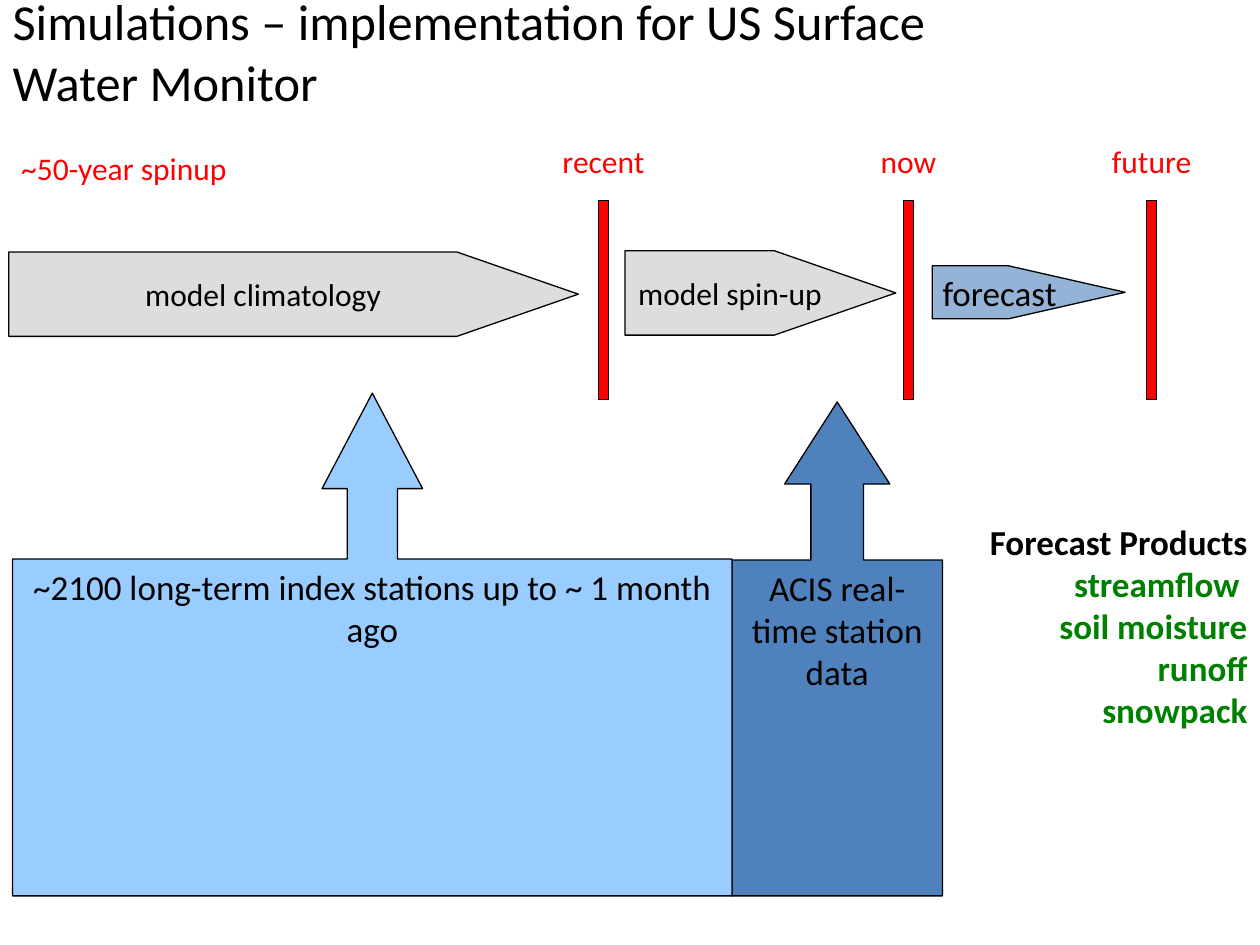
from dataclasses import dataclass

from pptx import Presentation
from pptx.dml.color import RGBColor
from pptx.enum.shapes import MSO_SHAPE as Shape
from pptx.enum.text import MSO_ANCHOR as Anchor, MSO_AUTO_SIZE as AutoSize, PP_ALIGN as Align
from pptx.util import Inches, Pt


@dataclass(frozen=True)
class Theme:
    font: str = "Calibri"
    ink: str = "000000"
    time: str = "FF0000"
    product: str = "008000"
    model: str = "DDDDDD"
    forecast: str = "95B3D7"
    index_stations: str = "99CCFF"
    realtime_stations: str = "4F81BD"
    title_size: float = 28.8
    body_size: float = 20
    label_size: float = 18
    outline: float = 0.75


THEME = Theme()


def style(paragraph, size, color=THEME.ink, align=Align.CENTER, bold=False):
    paragraph.alignment = align
    font = paragraph.font
    font.name, font.size, font.bold = THEME.font, Pt(size), bold
    font.color.rgb = RGBColor.from_string(color)


def add_block(slide, kind, box, fill, adjustments=()):
    shape = slide.shapes.add_shape(kind, *map(Inches, box))
    shape.shadow.inherit = False
    shape.fill.solid()
    shape.fill.fore_color.rgb = RGBColor.from_string(fill)
    shape.line.color.rgb = RGBColor.from_string(THEME.ink)
    shape.line.width = Pt(THEME.outline)
    for index, value in enumerate(adjustments):
        shape.adjustments[index] = value
    return shape


def set_title(slide, box, text):
    title = slide.shapes.title
    title.left, title.top, title.width, title.height = map(Inches, box)
    frame = title.text_frame
    frame.text = text
    frame.auto_size = AutoSize.NONE
    frame.vertical_anchor = Anchor.MIDDLE
    style(frame.paragraphs[0], THEME.title_size, align=Align.LEFT)


def add_label(slide, box, text, align=Align.CENTER):
    frame = slide.shapes.add_textbox(*map(Inches, box)).text_frame
    frame.word_wrap = False
    frame.text = text
    style(frame.paragraphs[0], THEME.label_size, THEME.time, align)


def add_time_mark(slide, box, text):
    """A red bar at the foot of the box with its label centred above."""
    left, top, width, height = box
    bar_width, bar_height = 0.08, 1.58
    add_label(slide, (left, top, width, 0.4), text)
    add_block(slide, Shape.RECTANGLE,
              (left + (width - bar_width) / 2, top + height - bar_height, bar_width, bar_height),
              THEME.time)


def add_phase(slide, box, text, fill, size, point):
    shape = add_block(slide, Shape.PENTAGON, box, fill, [point])
    frame = shape.text_frame
    frame.word_wrap = False
    frame.vertical_anchor = Anchor.MIDDLE
    frame.text = text
    style(frame.paragraphs[0], size)


def add_data_source(slide, box, text, fill, adjustments):
    shape = add_block(slide, Shape.UP_ARROW_CALLOUT, box, fill, adjustments)
    frame = shape.text_frame
    frame.word_wrap = True
    frame.vertical_anchor = Anchor.TOP
    frame.text = text
    style(frame.paragraphs[0], THEME.body_size)


def add_products(slide, box, heading, products):
    frame = slide.shapes.add_textbox(*map(Inches, box)).text_frame
    frame.word_wrap = True
    frame.text = "\n".join([heading, *products])
    for index, paragraph in enumerate(frame.paragraphs):
        color = THEME.product if index else THEME.ink
        style(paragraph, THEME.body_size, color, Align.RIGHT, bold=True)


def build_slide(presentation):
    slide = presentation.slides.add_slide(presentation.slide_layouts[5])
    set_title(slide, (0, 0.07, 8.5, 0.67),
              "Simulations – implementation for US Surface Water Monitor")
    add_products(slide, (7.33, 4.08, 2.67, 1.77), "Forecast Products",
                 ["streamflow ", "soil moisture", "runoff", "snowpack"])

    add_label(slide, (0.07, 1.13, 1.85, 0.4), "~50-year spinup", Align.LEFT)
    for text, center, width in [("recent", 4.79, 0.87), ("now", 7.21, 0.65),
                                ("future", 9.14, 0.84)]:
        add_time_mark(slide, (center - width / 2, 1.08, width, 2.09), text)

    add_phase(slide, (0.07, 2, 4.52, 0.67), "model climatology",
              THEME.model, THEME.label_size, 1.44)
    add_phase(slide, (4.96, 1.99, 2.15, 0.67), "model spin-up",
              THEME.model, THEME.label_size, 1.44)
    add_phase(slide, (7.4, 2.11, 1.53, 0.42), "forecast",
              THEME.forecast, THEME.body_size, 2.2)

    add_data_source(slide, (5.81, 3.19, 1.67, 3.92), "ACIS real-time station data",
                    THEME.realtime_stations, (0.25, 0.25, 0.39, 0.68))
    add_data_source(slide, (0.1, 3.12, 5.71, 3.99),
                    "~2100 long-term index stations up to ~ 1 month ago",
                    THEME.index_stations, (0.1, 0.1, 0.19, 0.67))


def main():
    presentation = Presentation()
    presentation.slide_width, presentation.slide_height = Inches(10), Inches(7.5)
    build_slide(presentation)
    presentation.save("out.pptx")


if __name__ == "__main__":
    main()
